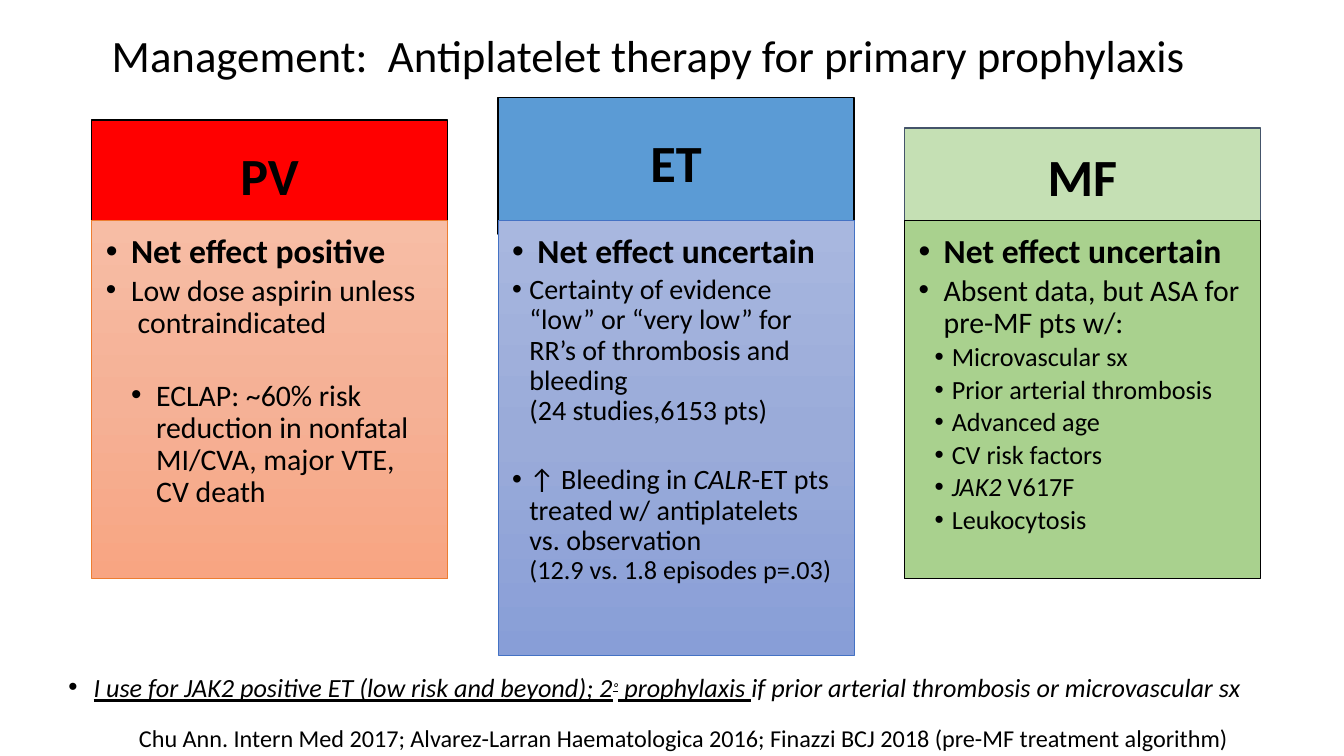
from copy import deepcopy

from lxml import etree
from pptx import Presentation
from pptx.dml.color import RGBColor
from pptx.enum.shapes import MSO_SHAPE
from pptx.enum.text import MSO_ANCHOR, PP_ALIGN
from pptx.oxml.ns import qn
from pptx.util import Inches, Pt

RECTANGLE = MSO_SHAPE.RECTANGLE
TOP, MIDDLE = MSO_ANCHOR.TOP, MSO_ANCHOR.MIDDLE
LEFT, CENTER = PP_ALIGN.LEFT, PP_ALIGN.CENTER


def color(value):
    return RGBColor.from_string(value)


def item(*runs, size=21.3, indent=0.25, hang=0.25, gap=0, **formats):
    return {"runs": runs, "size": size, "indent": indent, "hang": hang,
            "gap": gap, "formats": formats}


class SlideBuilder:
    """Builds one slide in a shared text style."""

    font = "Calibri"
    ink = "000000"

    def __init__(self, deck):
        self.page = deck.slides.add_slide(deck.slide_layouts[6])

    def text(self, left, top, width, height, items, **options):
        box = self.page.shapes.add_textbox(*map(Inches, (left, top, width, height)))
        self.fill_text(box, items, **options)

    def panel(self, left, top, width, height, fills, line, line_width, items, **options):
        box = self.page.shapes.add_shape(RECTANGLE, *map(Inches, (left, top, width, height)))
        box.shadow.inherit = False
        box.line.color.rgb = color(line)
        box.line.width = Pt(line_width)
        if len(fills) == 1:
            box.fill.solid()
            box.fill.fore_color.rgb = color(fills[0])
        else:
            self.shade(box, fills)
        self.fill_text(box, items, **options)

    def shade(self, box, fills):
        box.fill.gradient()
        box.fill.gradient_angle = 270
        stops = box._element.spPr.find(".//" + qn("a:gsLst"))
        stops.append(deepcopy(stops[-1]))
        for index, (stop, fill) in enumerate(zip(box.fill.gradient_stops, fills)):
            stop.position = index / (len(fills) - 1)
            stop.color.rgb = color(fill)

    def fill_text(self, box, items, insets=(0.1, 0.05, 0.1, 0.05), anchor=TOP,
                  align=LEFT, spacing=0.9, after=0):
        frame = box.text_frame
        settings = {"word_wrap": True, "vertical_anchor": anchor}
        sides = ("left", "top", "right", "bottom")
        settings.update({f"margin_{side}": Inches(inset) for side, inset in zip(sides, insets)})
        for name, value in settings.items():
            setattr(frame, name, value)
        for index, entry in enumerate(items):
            para = frame.add_paragraph() if index else frame.paragraphs[0]
            settings = {"alignment": align, "line_spacing": spacing,
                        "space_before": Pt(entry["gap"]), "space_after": Pt(after)}
            for name, value in settings.items():
                setattr(para, name, value)
            if entry["hang"]:
                self.bullet(para, entry["indent"], entry["hang"])
            for words in entry["runs"]:
                self.span(para, words, entry)

    def bullet(self, para, indent, hang):
        properties = para._p.get_or_add_pPr()
        properties.set("marL", str(Inches(indent)))
        properties.set("indent", str(-Inches(hang)))
        etree.SubElement(properties, qn("a:buFont")).set("typeface", "Arial")
        etree.SubElement(properties, qn("a:buChar")).set("char", "•")

    def span(self, para, content, entry):
        words, extra = content if isinstance(content, tuple) else (content, {})
        formats = {"name": self.font, "size": entry["size"], **entry["formats"], **extra}
        formats["size"] = Pt(formats["size"])
        raised = formats.pop("raised", False)
        for index, part in enumerate(words.split("\n")):
            if index:
                para.add_line_break()
            if not part:
                continue
            span = para.add_run()
            span.text = part
            span.font.color.rgb = color(self.ink)
            for name, value in formats.items():
                setattr(span.font, name, value)
            if raised:
                span._r.get_or_add_rPr().set("baseline", "30000")


def main():
    deck = Presentation()
    deck.slide_width, deck.slide_height = Inches(13.33), Inches(7.5)
    slide = SlideBuilder(deck)

    slide.text(1.01, 0.18, 11.5, 0.79, [
        item("Management:  Antiplatelet therapy for primary prophylaxis", size=32, hang=0),
    ], anchor=MIDDLE)
    underlined = {"underline": True}
    slide.text(0.58, 6.7, 12.6, 0.56, [item(
        ("I use for JAK2 positive ET (low risk and beyond); 2", underlined),
        ("◦", {"underline": True, "raised": True}),
        (" prophylaxis ", underlined),
        "if prior arterial thrombosis or microvascular sx",
        size=18.7, gap=10, italic=True,
    )], spacing=0.7)
    slide.text(1.28, 7.13, 12.05, 0.39, [item(
        "Chu Ann. Intern Med 2017; Alvarez-Larran Haematologica 2016; "
        "Finazzi BCJ 2018 (pre-MF treatment algorithm)", size=17.3, hang=0,
    )], spacing=1.0)

    positive = [
        item("Net effect positive", size=24, bold=True),
        item("Low dose aspirin unless\n contraindicated"),
        item("ECLAP: ~60% risk reduction in nonfatal MI/CVA, major VTE, CV death",
             indent=0.5, gap=26),
    ]
    evidence = [
        item("Net effect uncertain", size=24, bold=True),
        item("Certainty of evidence “low” or “very low” for RR’s of thrombosis and "
             "bleeding\n(24 studies,6153 pts)", size=20, indent=0.17, hang=0.17),
        item("↑ Bleeding in ", ("CALR", {"italic": True}),
             "-ET pts treated w/ antiplatelets vs. observation\n",
             ("(12.9 vs. 1.8 episodes p=.03)", {"size": 18.7}),
             size=20, indent=0.17, hang=0.17, gap=25),
    ]
    factors = [
        ["Microvascular sx"], ["Prior arterial thrombosis"], ["Advanced age"],
        ["CV risk factors"], [("JAK2", {"italic": True}), " V617F"], ["Leukocytosis"],
    ]
    absent = [
        item("Net effect uncertain", size=24, bold=True),
        item("Absent data, but ASA for pre-MF pts w/:"),
        *(item(*words, size=18.7, indent=0.33, hang=0.17) for words in factors),
    ]
    columns = [
        ("PV", 1.19, 1.17, "FF0000", "000000",
         3.55, ["F7BDA5", "F5B196", "F8A582"], "ED7D31", positive),
        ("ET", 0.97, 1.35, "5B9BD5", "000000",
         4.31, ["A8B7DF", "9AABD9", "889ED7"], "4472C4", evidence),
        ("MF", 1.27, 1.02, "C5E0B4", "44546A",
         3.55, ["A9D18E"], "000000", absent),
    ]
    for index, column in enumerate(columns):
        name, top, height, fill, line, depth, body_fills, body_line, items = column
        left = 0.91 + 4.03 * index
        slide.panel(left, top, 3.53, height, [fill], line, 1,
                    [item(name, size=37.3, hang=0, bold=True)],
                    insets=(0.29, 0.17, 0.29, 0.17), anchor=MIDDLE, align=CENTER)
        slide.panel(left, 2.19, 3.53, depth, body_fills, body_line, 0.5, items,
                    insets=(0.14, 0.14, 0.19, 0.21), after=3)

    deck.save("out.pptx")


if __name__ == "__main__":
    main()
